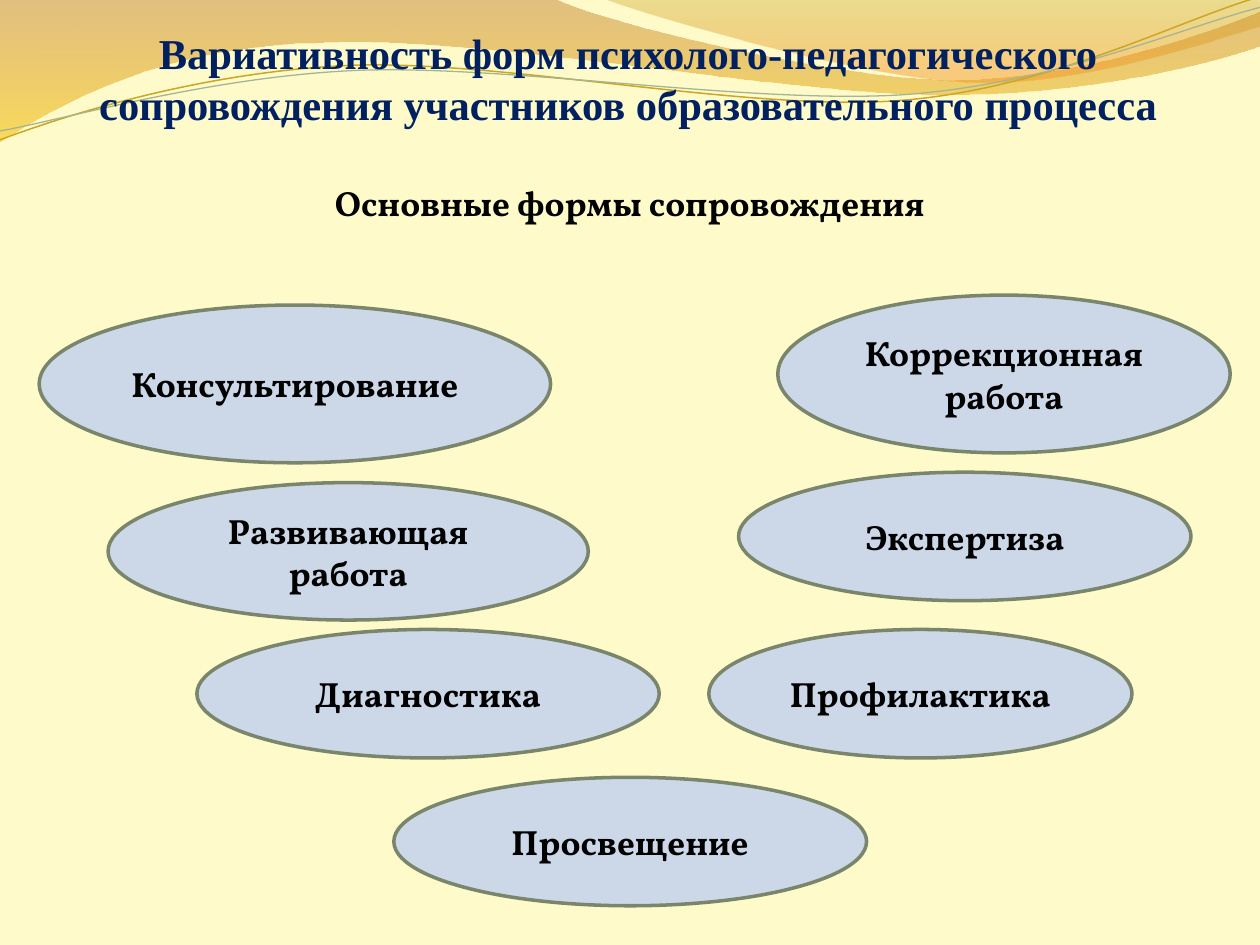
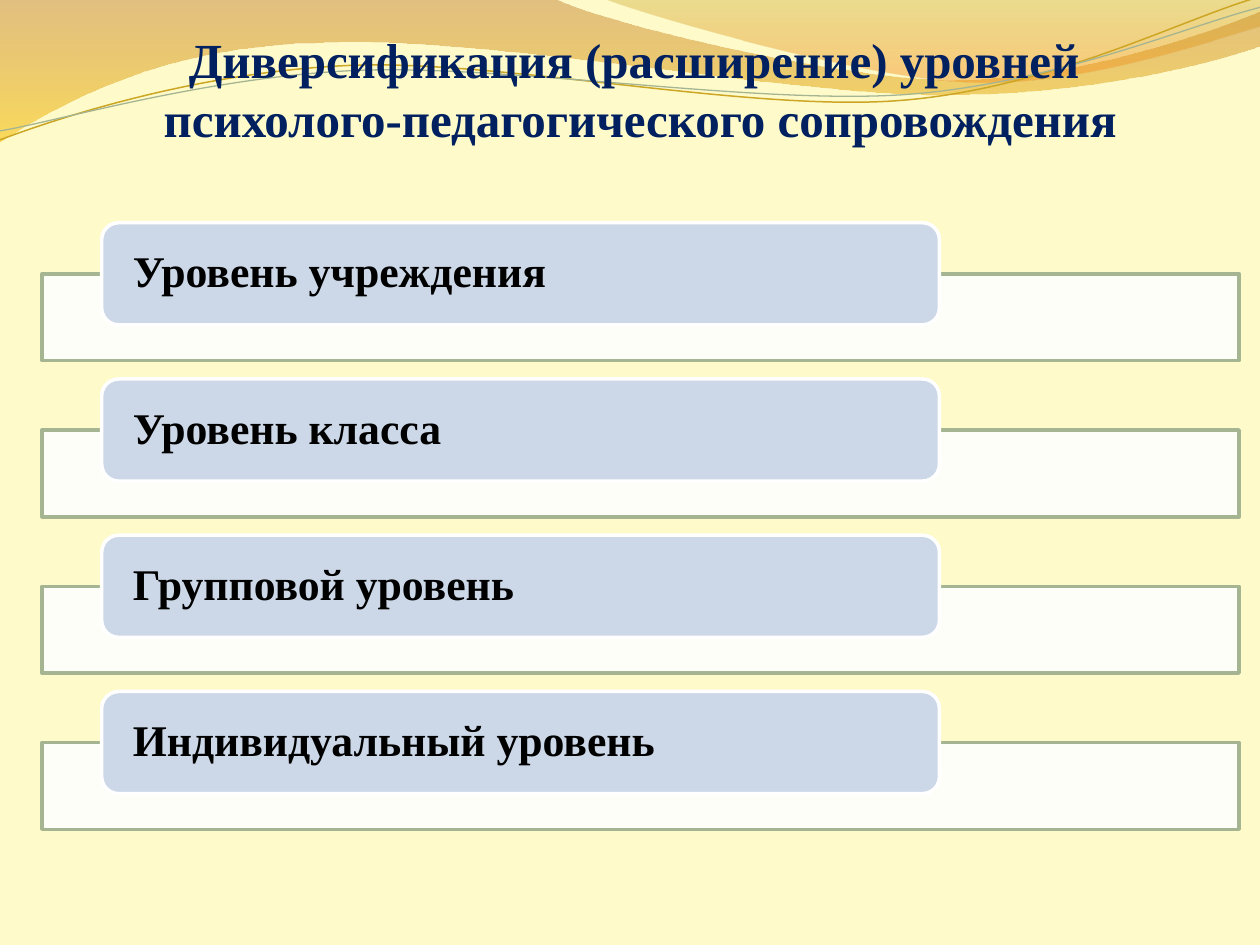
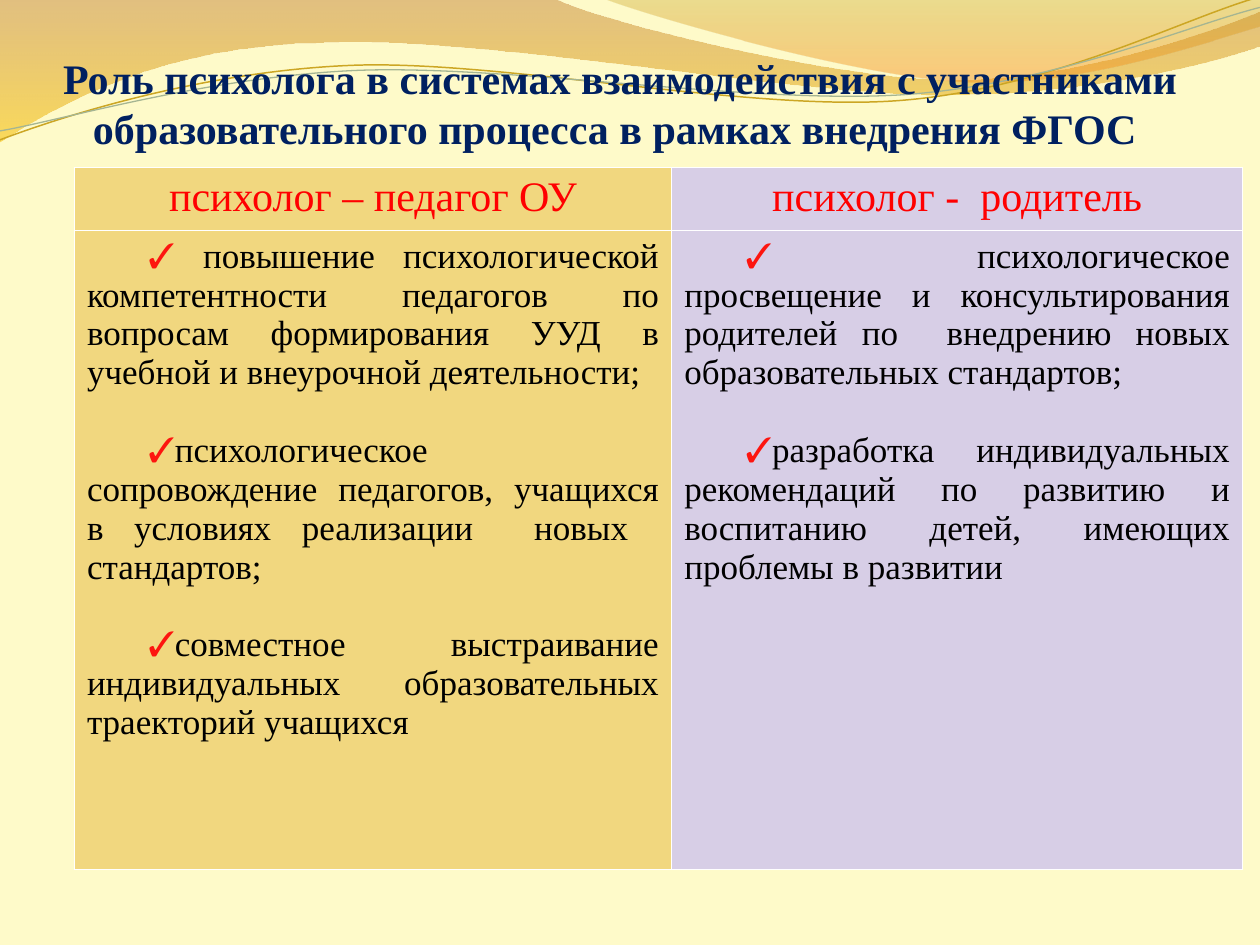
from dataclasses import dataclass
from lxml.etree import SubElement
from pptx import Presentation
from pptx.dml.color import RGBColor
from pptx.enum.shapes import MSO_SHAPE
from pptx.enum.text import MSO_ANCHOR, MSO_AUTO_SIZE, PP_ALIGN
from pptx.oxml import parse_xml
from pptx.oxml.ns import nsdecls, qn
from pptx.util import Cm, Pt


@dataclass(frozen=True)
class Theme:
    page: str = "FEFAC9"
    navy: str = "002060"
    ink: str = "000000"
    red: str = "FF0000"
    check: str = "FD150F"
    white: str = "FFFFFF"
    blue: str = "CCD8E7"
    olive: str = "7A866C"
    sage: str = "A5B592"
    gold: str = "CCA624"
    sand: str = "F1D77F"
    lilac: str = "D7CEE6"
    serif: str = "Times New Roman"
    book: str = "Vollkorn"
    head: float = 24
    level: float = 25
    body: float = 20


T = Theme()
rgb = RGBColor.from_string


def write(frame, *texts, size=T.body, font=T.serif, color=T.ink, bold=True, align=PP_ALIGN.CENTER,
          anchor=MSO_ANCHOR.MIDDLE, inset=None, gap=0, lead=None, bullet=None):
    frame.word_wrap = True
    if anchor is not None:
        frame.vertical_anchor = anchor
    if inset is not None:
        frame.margin_left = frame.margin_right = Cm(inset)
        frame.margin_top = frame.margin_bottom = 0
    for i, text in enumerate(texts):
        para = frame.paragraphs[0] if i == 0 else frame.add_paragraph()
        para.text = text
        para.alignment = align
        para.line_spacing = lead
        para.space_before = Pt(gap if i else 0)
        for run in para.runs:
            run.font.size, run.font.name, run.font.bold = Pt(size), font, bold
            run.font.color.rgb = rgb(color)
        if bullet:
            props = para._p.get_or_add_pPr()
            props.set("marL", "0")
            props.set("indent", str(Cm(1.24)))
            SubElement(SubElement(props, qn("a:buClr")), qn("a:srgbClr")).set("val", T.check)
            SubElement(props, qn("a:buFont")).set("typeface", font)
            SubElement(props, qn("a:buChar")).set("char", bullet)


def paint(shape, fill=None, line=None, width=2, alphas=()):
    shape.shadow.inherit = False
    if isinstance(fill, tuple):
        shape.fill.gradient()
        shape.fill.gradient_angle = 270
        for stop, (color, spot) in zip(shape.fill.gradient_stops, fill):
            stop.color.rgb, stop.position = rgb(color), spot
    elif fill:
        shape.fill.solid()
        shape.fill.fore_color.rgb = rgb(fill)
    else:
        shape.fill.background()
    for node, alpha in zip(shape.element.iter(qn("a:srgbClr")), alphas):
        SubElement(node, qn("a:alpha")).set("val", str(alpha * 1000))
    if line:
        shape.line.color.rgb = rgb(line)
        shape.line.width = Pt(width)
    else:
        shape.line.fill.background()


deck = Presentation()
deck.slide_width, deck.slide_height = Cm(25.4), Cm(19.05)
ground = deck.slide_master.background.fill
ground.solid()
ground.fore_color.rgb = rgb(T.page)

layout = deck.slide_layouts[5]
for holder in list(layout.placeholders)[1:]:
    holder.element.getparent().remove(holder.element)

titles = [
    ("Вариативность форм психолого-педагогического сопровождения участников образовательного процесса",
     24.3, (0.6, 0.6, 24.13, 2), MSO_ANCHOR.BOTTOM),
    ("Диверсификация (расширение) уровней \vпсихолого-педагогического сопровождения",
     28, (0.84, 0.79, 24.13, 2.18), MSO_ANCHOR.BOTTOM),
    ("Роль психолога в системах взаимодействия с участниками образовательного процесса в рамках внедрения ФГОС ",
     T.head, (0.79, 0.76, 23.42, 2.62), MSO_ANCHOR.MIDDLE),
]
slides = []
for text, size, box, anchor in titles:
    slide = deck.slides.add_slide(layout)
    title = slide.shapes.title
    title.left, title.top, title.width, title.height = map(Cm, box)
    write(title.text_frame, text, size=size, color=T.navy, anchor=anchor, inset=0)
    title.text_frame.auto_size = MSO_AUTO_SIZE.NONE
    slides.append(slide)
forms, levels, roles = slides

waves = [
    ([(0, -0.03), (11.18, -0.03), (12.09, 0.43, 16.87, 1.6, 19.25, 1.6),
      (21.67, 1.6, 24.33, 0.66, 25.4, 0.23), (25.43, 0.91),
      (24.97, 1.12, 22.1, 1.93, 18.95, 1.91), (15.8, 1.91, 9.7, 0.71, 6.53, 0.86),
      (3.28, 0.89, 1.17, 2.11, -0.03, 2.87)],
     dict(fill=(("C07A28", 0), ("F7BF00", 1)), alphas=(45, 55))),
    ([(12.17, -0.03), (12.93, 0.28, 17.32, 1.57, 19.53, 1.65),
      (21.74, 1.75, 24.41, 0.81, 25.4, 0.53), (25.4, 0)],
     dict(fill=(("C09709", 0), ("F59320", 0.8)), alphas=(30, 45))),
    ([(0, 2.82), (1.22, 2.36, 4.01, 1.45, 7.04, 1.32),
      (10.03, 1.19, 15.06, 2.26, 18.11, 2.03), (21.16, 1.8, 23.83, 0.38, 25.35, -0.05)],
     dict(line=T.gold, width=0.85)),
    ([(0, 2.64), (1.19, 2.44, 4.17, 1.55, 7.19, 1.42),
      (10.24, 1.3, 15.16, 2.11, 18.21, 1.91), (21.23, 1.7, 23.9, 0.53, 25.4, 0.15)],
     dict(line=T.sage, width=0.75)),
]
drawn = []
for nodes, style in waves:
    points = [(Cm(node[k]), Cm(node[k + 1])) for node in nodes for k in range(0, len(node), 2)]
    outline = forms.shapes.build_freeform(*points[0])
    outline.add_line_segments(points[1:], close="fill" in style)
    wave = outline.convert_to_shape()
    marks = iter(list(wave.element.iter(qn("a:lnTo"))))
    for node in nodes[1:]:
        parts = [next(marks) for _ in range(len(node) // 2)]
        if len(parts) == 3:
            curve = parse_xml(f"<a:cubicBezTo {nsdecls('a')}/>")
            parts[0].addprevious(curve)
            for part in parts:
                curve.append(part[0])
                part.getparent().remove(part)
    paint(wave, **style)
    drawn.append(wave.element)
for i, wave in enumerate(drawn):
    layout.shapes.element.insert(2 + i, wave)

intro = forms.shapes.add_textbox(Cm(0.5), Cm(3.53), Cm(24.4), Cm(1.3))
write(intro.text_frame, "Основные формы сопровождения", font=T.book, anchor=MSO_ANCHOR.TOP)
ovals = [
    ("Консультирование", 0.79, 6.15, 10.31, 3.18),
    ("Развивающая работа", 2.18, 9.73, 9.68, 2.77),
    ("Диагностика", 3.97, 12.69, 9.32, 2.59),
    ("Профилактика", 14.29, 12.69, 8.53, 2.59),
    ("Коррекционная работа", 15.68, 5.95, 9.12, 3.18),
    ("Экспертиза", 14.89, 9.52, 9.12, 2.59),
    ("Просвещение", 7.94, 15.67, 9.53, 2.59),
]
for text, *box in ovals:
    oval = forms.shapes.add_shape(MSO_SHAPE.OVAL, *map(Cm, box))
    paint(oval, fill=T.blue, line=T.olive)
    write(oval.text_frame, text, font=T.book)

ranks = ["Уровень учреждения", "Уровень класса", "Групповой уровень", "Индивидуальный уровень"]
for i, text in enumerate(ranks):
    top = 4.49 + 3.15 * i
    bar = levels.shapes.add_shape(MSO_SHAPE.RECTANGLE, Cm(0.85), Cm(top + 1.03), Cm(24.13), Cm(1.75))
    paint(bar, fill=T.white, line=T.sage, alphas=(90,))
    label = levels.shapes.add_shape(MSO_SHAPE.ROUNDED_RECTANGLE, Cm(2.05), Cm(top), Cm(16.89), Cm(2.06))
    paint(label, fill=T.blue, line=T.white)
    write(label.text_frame, text, size=T.level, align=PP_ALIGN.LEFT, inset=0.53, lead=0.9)

columns = [
    (12.04, T.sand, "психолог – педагог ОУ", [
        " повышение психологической компетентности педагогов по вопросам формирования УУД в учебной и внеурочной деятельности; ",
        "психологическое сопровождение педагогов, учащихся в условиях реализации  новых  стандартов;",
        "совместное выстраивание индивидуальных образовательных траекторий учащихся"]),
    (11.51, T.lilac, "психолог -  родитель", [
        " психологическое просвещение и консультирования родителей по  внедрению новых образовательных стандартов;",
        "разработка индивидуальных рекомендаций по развитию и воспитанию детей, имеющих проблемы в развитии "]),
]
table = roles.shapes.add_table(2, 2, Cm(1.5), Cm(3.38), Cm(23.55), Cm(14.15)).table
table.rows[0].height, table.rows[1].height = Cm(1.27), Cm(12.88)
for i, (width, tint, head, tasks) in enumerate(columns):
    table.columns[i].width = Cm(width)
    top, body = table.cell(0, i), table.cell(1, i)
    write(top.text_frame, head, size=T.head, color=T.red, bold=False, anchor=None)
    write(body.text_frame, *tasks, bold=False, align=PP_ALIGN.JUSTIFY, anchor=None, gap=22.2, bullet="✓")
    for cell in (top, body):
        props = cell._tc.get_or_add_tcPr()
        for side in ("lnL", "lnR", "lnT", "lnB"):
            edge = SubElement(props, qn("a:" + side), w=str(Pt(1)))
            SubElement(SubElement(edge, qn("a:solidFill")), qn("a:srgbClr")).set("val", T.white)
        cell.fill.solid()
        cell.fill.fore_color.rgb = rgb(tint)

deck.save("out.pptx")
